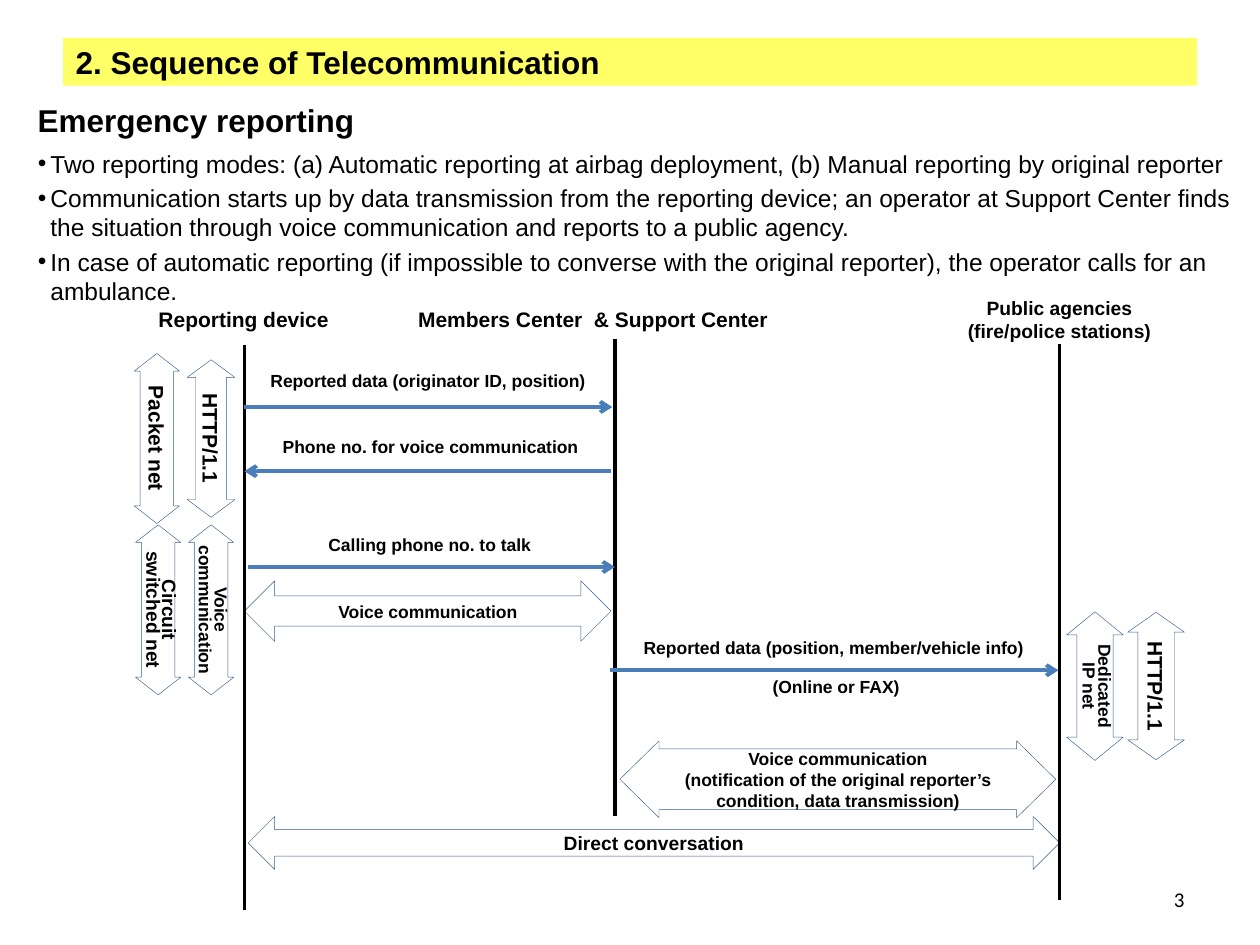
import pptx
import pptx.util
import pptx.dml.color
import pptx.enum.shapes
import pptx.enum.text
import pptx.oxml.ns
from lxml import etree

Inches = pptx.util.Inches
Pt = pptx.util.Pt
ALIGN = pptx.enum.text.PP_ALIGN
MIDDLE = pptx.enum.text.MSO_ANCHOR.MIDDLE
NO_FIT = pptx.enum.text.MSO_AUTO_SIZE.NONE

COLORS = {
    "text": "000000",
    "banner": "FFFF66",
    "arrow": "4A7EBB",
    "edge": "385D8A",
    "white": "FFFFFF",
}

# Lifeline positions
DEVICE, CENTER, AGENCY = 1.94, 4.88, 8.41

# Lifelines: x, top, bottom
LIVES = [(DEVICE, 2.74, 7.22), (CENTER, 2.69, 6.48), (AGENCY, 2.73, 7.14)]

# Messages: start x, end x, y
CALLS = [
    (1.94, 4.86, 3.23),
    (4.85, 1.94, 3.74),
    (1.97, 4.88, 4.5),
    (4.84, 8.4, 5.32),
]

# Labels: lines, box, size, alignment, wrap
LABELS = [
    (["Emergency reporting"], (0.2, 0.75, 2.9, 0.4), 18, ALIGN.LEFT, True),
    (["Reporting device"], (1.16, 2.38, 1.57, 0.3), 12, ALIGN.LEFT, False),
    (["Members Center  & Support Center"], (3.22, 2.38, 3.14, 0.3), 12,
     ALIGN.LEFT, False),
    (["Public agencies", "(fire/police stations)"], (7.58, 2.3, 1.66, 0.47), 11,
     ALIGN.CENTER, False),
    (["Reported data (originator ID, position)"], (1.94, 2.89, 2.91, 0.28), 10,
     ALIGN.CENTER, True),
    (["Phone no. for voice communication"], (1.94, 3.41, 2.95, 0.27), 10,
     ALIGN.CENTER, True),
    (["Calling phone no. to talk"], (1.94, 4.19, 2.94, 0.27), 10,
     ALIGN.CENTER, True),
    (["Reported data (position, member/vehicle info)"], (4.99, 5.01, 3.25, 0.27),
     10, ALIGN.CENTER, False),
    (["(Online or FAX)"], (6.02, 5.32, 1.23, 0.27), 10, ALIGN.CENTER, False),
]

# Talks across lifelines: lines, box, adjustments, size, side inset
TALKS = [
    (["Voice communication"], (1.94, 4.61, 2.91, 0.48), (0.5, 0.5), 10, 0.1),
    (["Voice communication",
      "(notification of the original reporter’s condition, data transmission)"],
     (4.92, 5.88, 3.46, 0.61), (0.79, 0.51), 10, 0.04),
    (["Direct conversation"], (1.97, 6.48, 6.44, 0.42), (0.5, 0.5), 11, 0.1),
]

# Upright network spans: text, box, adjustments, size, side inset, line pitch
NETS = [
    ("Packet net", (0.57, 3.3, 1.35, 0.36), (0.74, 0.39), 12, 0.1, None),
    ("HTTP/1.1", (1.05, 3.29, 1.25, 0.38), (0.64, 0.37), 12, 0.1, None),
    ("Circuit switched net", (0.58, 4.66, 1.35, 0.36), (0.74, 0.39), 11, 0.1, 9),
    ("Voice communication", (1, 4.66, 1.35, 0.36), (0.74, 0.39), 10, 0, 9),
    ("Dedicated IP net", (8.1, 5.22, 1.18, 0.45), (0.64, 0.41), 10, 0.1, 9),
    ("HTTP/1.1", (8.59, 5.22, 1.17, 0.45), (0.64, 0.35), 12, 0.1, None),
]

POINTS = [
    "Two reporting modes: (a) Automatic reporting at airbag deployment, "
    "(b) Manual reporting by original reporter",
    "Communication starts up by data transmission from the reporting device; "
    "an operator at Support Center finds the situation through voice "
    "communication and reports to a public agency.",
    "In case of automatic reporting (if impossible to converse with the "
    "original reporter), the operator calls for an ambulance.",
]


def color(name):
    return pptx.dml.color.RGBColor.from_string(COLORS[name])


def place(shape, box):
    shape.left, shape.top, shape.width, shape.height = map(Inches, box)


def add_run(para, text, size, bold=True, face="Arial"):
    run = para.add_run()
    run.text = text
    run.font.name = face
    run.font.size = Pt(size)
    run.font.bold = bold
    run.font.color.rgb = color("text")


def write(frame, lines, size, align, pitch=None, bold=True, face="Arial"):
    for i, line in enumerate(lines):
        para = frame.add_paragraph() if i else frame.paragraphs[0]
        para.alignment = align
        if pitch:
            para.line_spacing = Pt(pitch)
        add_run(para, line, size, bold, face)


def add_label(slide, lines, box, size, align, wrap, **style):
    frame = slide.shapes.add_textbox(*map(Inches, box)).text_frame
    frame.word_wrap = wrap
    write(frame, lines, size, align, **style)
    return frame


def add_span(slide, lines, box, adjust, size, inset, pitch=None, turn=0):
    kind = pptx.enum.shapes.MSO_SHAPE.LEFT_RIGHT_ARROW
    shape = slide.shapes.add_shape(kind, *map(Inches, box))
    shape.rotation = turn
    shape.shadow.inherit = False
    for i, value in enumerate(adjust):
        shape.adjustments[i] = value
    shape.fill.solid()
    shape.fill.fore_color.rgb = color("white")
    shape.line.color.rgb = color("edge")
    shape.line.width = Pt(0.25)
    frame = shape.text_frame
    frame.word_wrap = True
    frame.vertical_anchor = MIDDLE
    frame.margin_left = frame.margin_right = Inches(inset)
    write(frame, lines, size, ALIGN.CENTER, pitch)


def add_line(slide, start, end, name, width, arrow=False):
    kind = pptx.enum.shapes.MSO_CONNECTOR.STRAIGHT
    line = slide.shapes.add_connector(kind, *map(Inches, start + end))
    line.line.color.rgb = color(name)
    line.line.width = Pt(width)
    qn = pptx.oxml.ns.qn
    if arrow:
        etree.SubElement(line.line._get_or_add_ln(), qn("a:tailEnd"), type="arrow")
    etree.SubElement(line._element.spPr, qn("a:effectLst"))


def set_title(slide):
    title = slide.shapes.title
    place(title, (0.5, 0.3, 9, 0.38))
    title.fill.solid()
    title.fill.fore_color.rgb = color("banner")
    frame = title.text_frame
    frame.auto_size = NO_FIT
    frame.vertical_anchor = MIDDLE
    write(frame, ["2. Sequence of Telecommunication"], 18, ALIGN.LEFT)


def set_points(slide):
    body = slide.placeholders[1]
    place(body, (0.2, 1.13, 9.69, 1.26))
    frame = body.text_frame
    frame.auto_size = NO_FIT
    write(frame, POINTS, 14, ALIGN.LEFT, bold=False)
    for i, para in enumerate(frame.paragraphs):
        para.space_before = Pt(2.8 if i else 0)
        props = para._p.get_or_add_pPr()
        props.set("marL", str(Inches(0.1)))
        props.set("indent", str(Inches(-0.1)))
        etree.SubElement(props, pptx.oxml.ns.qn("a:buChar"), char="•")


def main():
    deck = pptx.Presentation()
    deck.slide_width, deck.slide_height = Inches(10), Inches(7.5)
    slide = deck.slides.add_slide(deck.slide_layouts[1])

    # Heading and list
    set_title(slide)
    set_points(slide)

    # Two-way spans
    for talk in TALKS:
        add_span(slide, *talk)
    for text, *rest in NETS:
        add_span(slide, [text], *rest, turn=90)

    # Lifelines and messages
    for x, top, bottom in LIVES:
        add_line(slide, (x, top), (x, bottom), "text", 2)
    for start, end, y in CALLS:
        add_line(slide, (start, y), (end, y), "arrow", 2.25, arrow=True)

    # Labels and page number
    for label in LABELS:
        add_label(slide, *label)
    page = add_label(slide, ["3"], (9.02, 6.94, 0.48, 0.4), 12, ALIGN.RIGHT, True,
                     bold=False, face="Calibri")
    page.vertical_anchor = MIDDLE

    deck.save("out.pptx")


if __name__ == "__main__":
    main()
